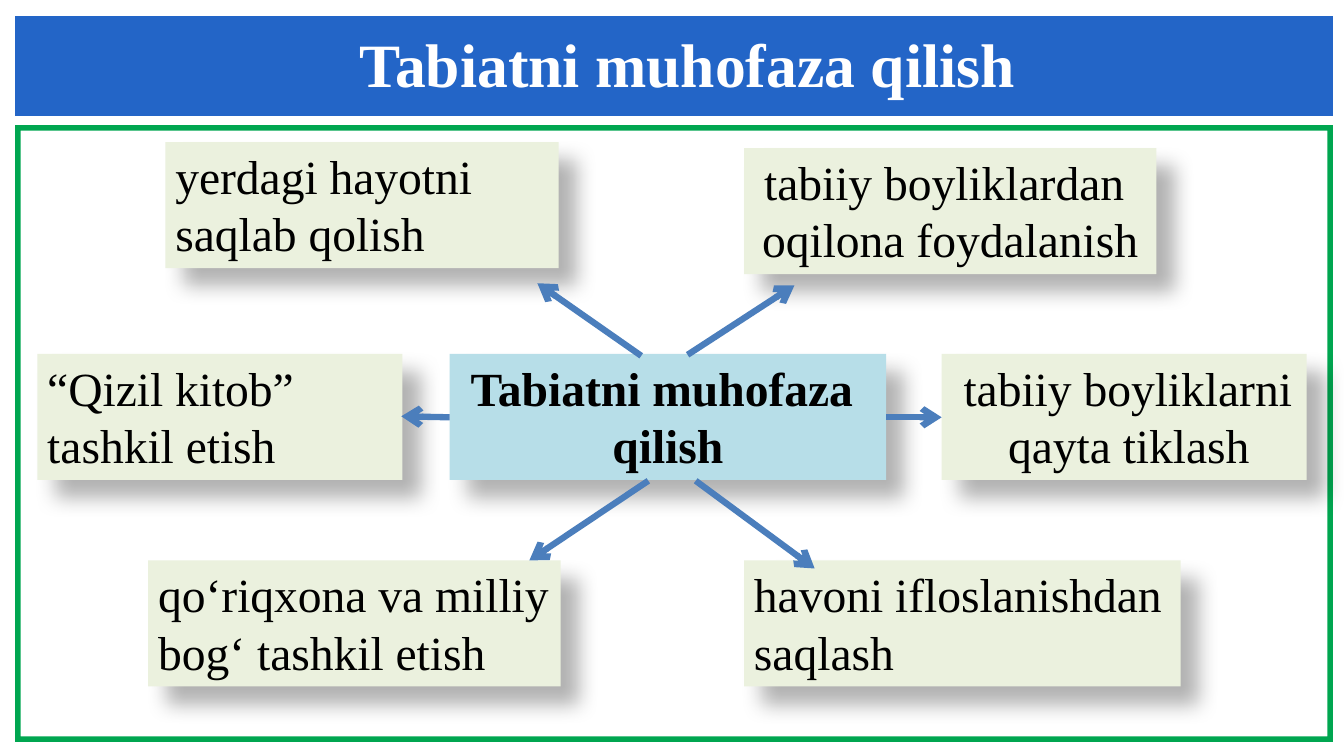
from lxml import etree
from pptx import Presentation
from pptx import util as u
from pptx.dml.color import RGBColor
from pptx.enum import shapes, text
from pptx.oxml import parse_xml
from pptx.oxml.ns import qn

PX = 9144
DRAWING = "http://schemas.openxmlformats.org/drawingml/2006/main"
SHADOW = (
    f'<a:effectLst xmlns:a="{DRAWING}">'
    '<a:outerShdw blurRad="190500" dist="228600" dir="2700000" algn="ctr" rotWithShape="0">'
    '<a:srgbClr val="000000"><a:alpha val="30000"/></a:srgbClr>'
    '</a:outerShdw></a:effectLst>'
)
GREEN, BLUE, PALE, AQUA, STEEL = "00A650", "2365C7", "EBF1DE", "B7DEE8", "4B7EBC"


def color(value):
    return RGBColor.from_string(value)


def write(para, words, ink, **format_values):
    span = para.add_run()
    span.text = words
    span.font.color.rgb = color(ink)
    for name, value in {"name": "Times New Roman", **format_values}.items():
        setattr(span.font, name, value)


deck = Presentation()
deck.slide_width, deck.slide_height = 1333 * PX, 750 * PX
page = deck.slides.add_slide(deck.slide_layouts[5])
left, center = text.PP_ALIGN.LEFT, text.PP_ALIGN.CENTER

for kind, top, height, fill in [
    (shapes.MSO_SHAPE.FRAME, 124, 612, GREEN),
    (shapes.MSO_SHAPE.RECTANGLE, 16, 99, BLUE),
]:
    panel = page.shapes.add_shape(kind, 15 * PX, top * PX, 1307 * PX, height * PX)
    panel.shadow.inherit = False
    panel.fill.solid()
    panel.fill.fore_color.rgb = color(fill)
    panel.line.fill.background()
    if kind == shapes.MSO_SHAPE.FRAME:
        panel.adjustments[0] = 5.5 / height

title = page.shapes.title
page.shapes._spTree.append(title._element)
for name, value in {"left": 68, "top": 21, "width": 1228, "height": 158}.items():
    setattr(title, name, value * PX)
title.text_frame.auto_size = text.MSO_AUTO_SIZE.NONE
title.text_frame.vertical_anchor = text.MSO_ANCHOR.TOP
para = title.text_frame.paragraphs[0]
para.alignment = center
write(para, "Tabiatni muhofaza qilish", "FFFFFF", size=u.Pt(44), bold=True)

boxes = [
    (446, 351, 433, AQUA, center, ["Tabiatni muhofaza ", "qilish"]),
    (164, 141, 390, PALE, left, ["yerdagi hayotni", "saqlab qolish"]),
    (934, 351, 362, PALE, left, [" tabiiy boyliklarni qayta tiklash"]),
    (147, 556, 409, PALE, left, ["qo‘riqxona va milliy", "bog‘ tashkil etish"]),
    (37, 351, 362, PALE, left, ["“Qizil kitob”", "tashkil etish"]),
    (738, 147, 409, PALE, center, ["tabiiy boyliklardan ", "oqilona foydalanish"]),
    (738, 556, 433, PALE, left, ["havoni ifloslanishdan", "saqlash"]),
]
for x, y, width, fill, alignment, lines in boxes:
    box = page.shapes.add_shape(
        shapes.MSO_SHAPE.RECTANGLE, x * PX, y * PX, width * PX, 125 * PX
    )
    box.fill.solid()
    box.fill.fore_color.rgb = color(fill)
    box.line.fill.background()
    box._element.spPr.append(parse_xml(SHADOW))
    frame = box.text_frame
    frame.word_wrap = True
    frame.vertical_anchor = text.MSO_ANCHOR.TOP
    frame.auto_size = text.MSO_AUTO_SIZE.SHAPE_TO_FIT_TEXT
    for index, line in enumerate(lines):
        para = frame.add_paragraph() if index else frame.paragraphs[0]
        para.alignment = alignment
        properties = para._p.get_or_add_pPr()
        properties.set("marL", str(56 * PX))
        properties.set("indent", str(-56 * PX))
        write(para, line, "000000", size=u.Pt(34), bold=fill == AQUA)

arrows = [
    (636, 353, 533, 281),
    (446, 414, 398, 413),
    (879, 414, 934, 414),
    (643, 477, 525, 556),
    (682, 352, 788, 283),
    (690, 477, 808, 564),
]
for ends in arrows:
    arrow = page.shapes.add_connector(
        shapes.MSO_CONNECTOR.STRAIGHT, *[value * PX for value in ends]
    )
    arrow.line.color.rgb = color(STEEL)
    arrow.line.width = u.Pt(4.5)
    etree.SubElement(arrow.line._get_or_add_ln(), qn("a:tailEnd"), type="arrow")
    etree.SubElement(arrow._element.spPr, qn("a:effectLst"))

deck.save("out.pptx")
